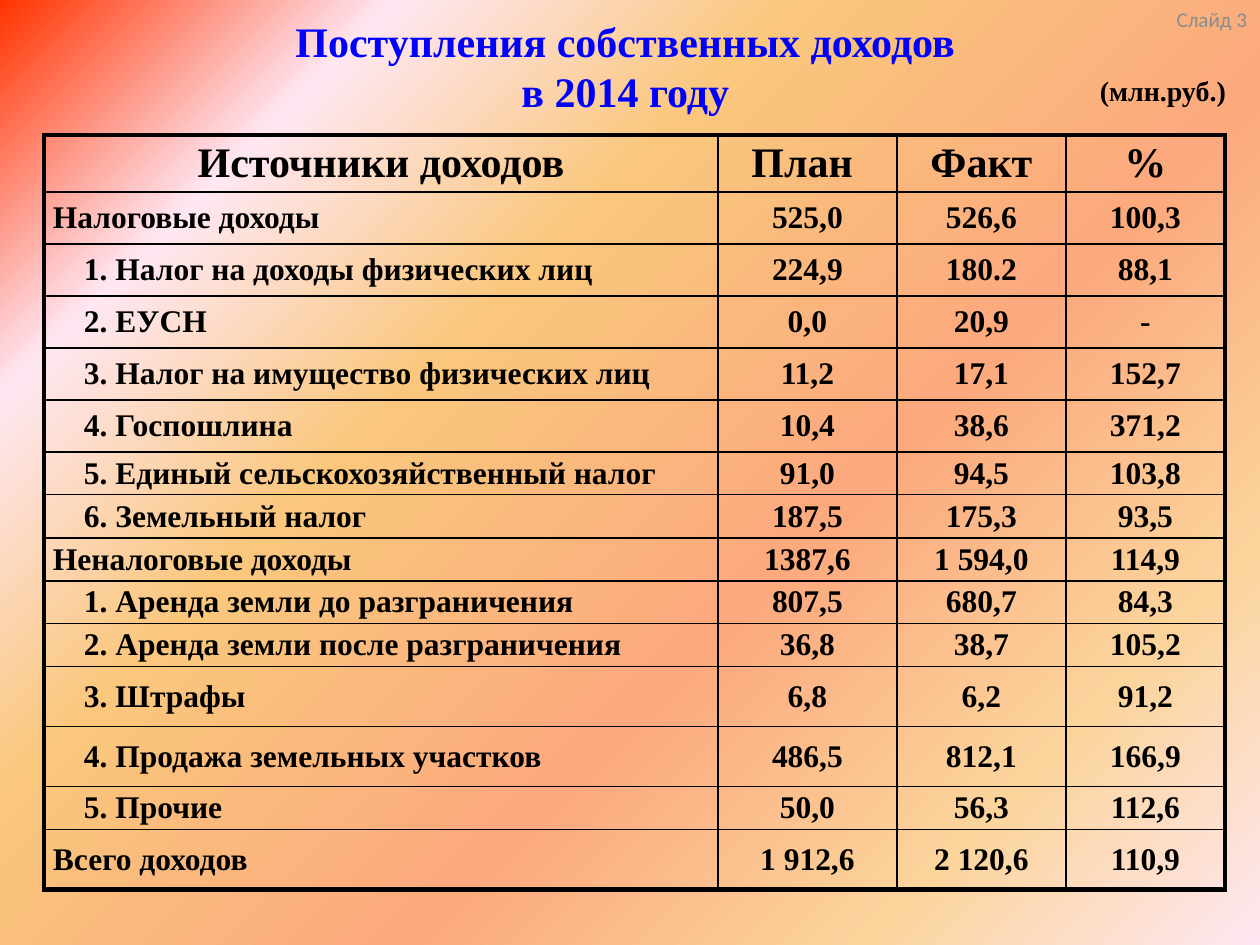
from lxml import etree
from pptx import Presentation
from pptx import util as u
from pptx.dml.color import RGBColor
from pptx.enum import text
from pptx.oxml.ns import qn

PX = u.Inches(1) // 126
SERIF = "Times New Roman"
BLACK = "000000"

STOPS = [(0, "FF3300"), (18, "FEE7F2"), (36, "FAC77D"),
         (61, "FBA97D"), (82, "FBD49C"), (100, "FEE7F2")]

BOXES = [
    dict(words="Поступления собственных доходов \vв 2014 году ", at=(35, 16, 1191, 100),
         align="CENTER", anchor="MIDDLE", inset=0,
         font=dict(name=SERIF, size=24, bold=True, color="0000FF")),
    dict(words="(млн.руб.)", at=(1086, 66, 154, 49),
         align="CENTER", anchor="MIDDLE", inset=0,
         font=dict(name=SERIF, size=16, bold=True, color=BLACK)),
    dict(words="Слайд 3", at=(1155, 0, 105, 65),
         align="RIGHT", anchor="TOP", inset=7,
         font=dict(name="Calibri", size=12, bold=False, color="8C8C8C")),
]

TABLE_AT = (44, 135)
COLS = [674, 179, 169, 159]
HEAD, TALL, MID, LOW = 57, 60, 52, 43
INSET, INDENT = 9, 31
THICK, NORMAL, THIN = 3, 1, 0.5

ROWS = [
    (HEAD, NORMAL, ["Источники доходов", "План ", "Факт", "%"]),
    (MID, NORMAL, ["Налоговые доходы", "525,0", "526,6", "100,3"]),
    (MID, NORMAL, ["1. Налог на доходы физических лиц", "224,9", "180.2", "88,1"]),
    (MID, NORMAL, ["2. ЕУСН", "0,0", "20,9", "-"]),
    (MID, NORMAL, ["3. Налог на имущество физических лиц", "11,2", "17,1", "152,7"]),
    (MID, NORMAL, ["4. Госпошлина", "10,4", "38,6", "371,2"]),
    (LOW, THIN, ["5. Единый сельскохозяйственный налог", "91,0", "94,5", "103,8"]),
    (LOW, NORMAL, ["6. Земельный налог", "187,5", "175,3", "93,5"]),
    (LOW, NORMAL, ["Неналоговые доходы", "1387,6", "1 594,0", "114,9"]),
    (LOW, THIN, ["1. Аренда земли до разграничения", "807,5", "680,7", "84,3"]),
    (LOW, THIN, ["2. Аренда земли после разграничения", "36,8", "38,7", "105,2"]),
    (TALL, NORMAL, ["3. Штрафы", "6,8", "6,2", "91,2"]),
    (TALL, THIN, ["4. Продажа земельных участков", "486,5", "812,1", "166,9"]),
    (LOW, NORMAL, ["5. Прочие", "50,0", "56,3", "112,6"]),
    (TALL, THICK, ["Всего доходов", "1 912,6", "2 120,6", "110,9"]),
]


def px(*values):
    return [u.Emu(v * PX) for v in values]


def rgb(value):
    return RGBColor.from_string(value)


def write(tf, words, align, font):
    p = tf.paragraphs[0]
    p.text = words
    p.alignment = getattr(text.PP_ALIGN, align)
    values = dict(font, size=u.Pt(font["size"]))
    color = values.pop("color")
    for r in p.runs:
        for key, value in values.items():
            setattr(r.font, key, value)
        r.font.color.rgb = rgb(color)


def set_margins(target, left, top, right, bottom):
    sides = dict(left=left, top=top, right=right, bottom=bottom)
    for side, value in sides.items():
        setattr(target, f"margin_{side}", px(value)[0])


def solid(parent, color):
    fill = etree.SubElement(parent, qn("a:solidFill"))
    etree.SubElement(fill, qn("a:srgbClr"), val=color)


def paint_background(slide):
    fill = slide.background.fill
    fill.gradient()
    fill.gradient_angle = 315
    stops = slide.element.find(".//" + qn("a:gsLst"))
    for stop in list(stops):
        stops.remove(stop)
    for percent, color in STOPS:
        stop = etree.SubElement(stops, qn("a:gs"), pos=str(percent * 1000))
        etree.SubElement(stop, qn("a:srgbClr"), val=color)


def add_box(slide, words, at, align, anchor, inset, font):
    tf = slide.shapes.add_textbox(*px(*at)).text_frame
    tf.word_wrap = True
    tf.vertical_anchor = getattr(text.MSO_ANCHOR, anchor)
    set_margins(tf, inset, inset, 13 if inset else 0, inset)
    write(tf, words, align, font)


def set_borders(cell, **widths):
    tc_pr = cell._tc.get_or_add_tcPr()
    for side, width in widths.items():
        line = etree.SubElement(tc_pr, qn(f"a:ln{side}"), w=str(u.Pt(width)))
        solid(line, BLACK)


def add_income_table(slide):
    heights = [height for height, _, _ in ROWS]
    frame = slide.shapes.add_table(len(ROWS), len(COLS),
                                   *px(*TABLE_AT, sum(COLS), sum(heights)))
    table = frame.table
    table.first_row = table.horz_banding = False
    for column, width in zip(table.columns, COLS):
        column.width = px(width)[0]
    top = THICK
    for i, (height, bottom, words) in enumerate(ROWS):
        table.rows[i].height = px(height)[0]
        for j, word in enumerate(words):
            cell = table.cell(i, j)
            label = i > 0 and j == 0
            indent = INDENT if label and word[0].isdigit() else 0
            set_margins(cell, INSET + indent, 0, INSET, 0)
            cell.vertical_anchor = text.MSO_ANCHOR.MIDDLE
            write(cell.text_frame, word, "LEFT" if label else "CENTER",
                  dict(name=SERIF, size=18 if i else 24, bold=True, color=BLACK))
            set_borders(cell, L=NORMAL if j else THICK,
                        R=THICK if j == len(COLS) - 1 else NORMAL, T=top, B=bottom)
            cell.fill.background()
        top = bottom


def main():
    prs = Presentation()
    prs.slide_width, prs.slide_height = px(1260, 945)
    slide = prs.slides.add_slide(prs.slide_layouts[6])
    paint_background(slide)
    for box in BOXES:
        add_box(slide, **box)
    add_income_table(slide)
    prs.save("out.pptx")


if __name__ == "__main__":
    main()
